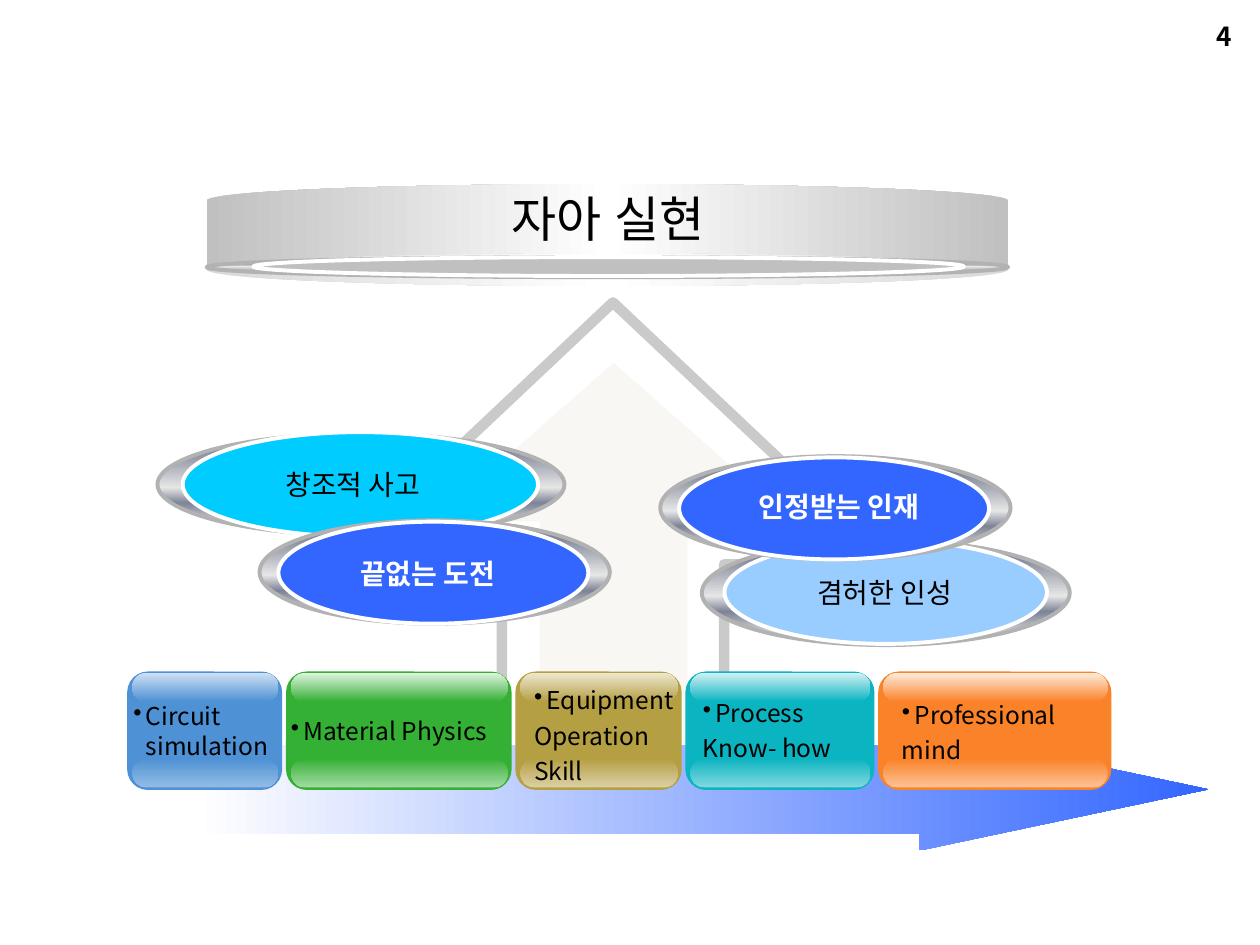
from lxml import etree
from pptx import Presentation
from pptx.dml.color import RGBColor
from pptx.enum.shapes import MSO_SHAPE
from pptx.enum.text import MSO_ANCHOR, MSO_AUTO_SIZE, PP_ALIGN
from pptx.oxml.ns import qn
from pptx.util import Inches, Pt

OVAL, CAN = MSO_SHAPE.OVAL, MSO_SHAPE.CAN
ROUND = MSO_SHAPE.ROUNDED_RECTANGLE
UP, RIGHT_ARROW = MSO_SHAPE.UP_ARROW, MSO_SHAPE.RIGHT_ARROW
TOP, MIDDLE = MSO_ANCHOR.TOP, MSO_ANCHOR.MIDDLE
LEFT, CENTER, RIGHT = PP_ALIGN.LEFT, PP_ALIGN.CENTER, PP_ALIGN.RIGHT

KOREAN = "Noto Sans CJK KR"
CHROME = [(0, "E6E6E6"), (15, "7D8496"), (53, "E6E6E6"),
          (68, "7D8496"), (93, "E6E6E6"), (100, "FFFFFF")]
SILVER = [(0, "C0C0C0"), (50, "FFFFFF"), (100, "C0C0C0")]

CARD_LEFT, CARD_TOP, CARD_HEIGHT, CARD_GAP = 1.01, 5.33, 0.94, 0.03
# width, colour, top gloss, bottom gloss, lines, text dx, dy, width, anchor
CARDS = [
    (1.23, "4E91D4", "CEE1F3", "93BCE5", ["Circuit simulation"],
     -0.05, 0.13, 1.5, MIDDLE),
    (1.79, "34B034", "E0F3E0", "A3DBA3", ["Material Physics"],
     -0.06, 0.13, 2.07, MIDDLE),
    (1.32, "B59F43", "EDE8D1", "DBD0A4", ["Equipment", "Operation", "Skill"],
     0.05, 0.06, 1.48, TOP),
    (1.5, "0BB4C1", "D3F1F4", "82D8DF", ["Process", "Know- how"],
     0.04, 0.16, 2.07, TOP),
    (1.85, "FA8228", "FEECDE", "FDC296", ["Professional", "mind"],
     0.09, 0.14, 1.76, MIDDLE),
]
# outer ring, inner disc, disc colour, text, text box, text colour, bold
BADGES = [
    ((5.57, 4.29, 2.92, 0.83), (5.75, 4.29, 2.56, 0.82), "99CCFF",
     "겸허한 인성", (6.12, 4.52, 1.8, 0.37), "000000", False),
    ((1.25, 3.44, 3.23, 0.81), (1.45, 3.43, 2.82, 0.83), "00CCFF",
     "창조적 사고", (1.9, 3.66, 1.8, 0.37), "000000", False),
    ((2.06, 4.13, 2.78, 0.82), (2.21, 4.14, 2.46, 0.81), "3366FF",
     "끝없는 도전", (2.53, 4.37, 1.73, 0.37), "FFFFFF", True),
    ((5.24, 3.62, 2.78, 0.82), (5.39, 3.63, 2.46, 0.81), "3366FF",
     "인정받는 인재", (5.4, 3.84, 2.52, 0.37), "FFFFFF", True),
]


def rgb(color):
    return RGBColor.from_string(color)


def set_alpha(sp, parent, percent):
    """Make the solid colour under the given spPr path translucent."""
    for clr in sp._element.spPr.xpath(f"{parent}/a:solidFill/a:srgbClr"):
        etree.SubElement(clr, qn("a:alpha"), val=str(percent * 1000))


def set_gradient(sp, stops, angle):
    sp.fill.gradient()
    sp.fill.gradient_angle = -angle % 360
    gs_list = sp._element.spPr.xpath("./a:gradFill/a:gsLst")[0]
    for old in list(gs_list):
        gs_list.remove(old)
    for pos, color in stops:
        gs = etree.SubElement(gs_list, qn("a:gs"), pos=str(pos * 1000))
        etree.SubElement(gs, qn("a:srgbClr"), val=color)


def add_shape(s, kind, box, fill=None, line=None, width=2.25, adj=(),
              angle=0, rotation=0):
    """Fill is a hex colour, a list of gradient stops, or None."""
    sp = s.shapes.add_shape(kind, *map(Inches, box))
    sp.shadow.inherit = False
    sp.rotation = rotation
    for i, value in enumerate(adj):
        sp.adjustments[i] = value
    if fill is None:
        sp.fill.background()
    elif isinstance(fill, str):
        sp.fill.solid()
        sp.fill.fore_color.rgb = rgb(fill)
    else:
        set_gradient(sp, fill, angle)
    if line:
        sp.line.color.rgb = rgb(line)
        sp.line.width = Pt(width)
    else:
        sp.line.fill.background()
    return sp


def add_run(p, text, size, color="000000", bold=False, font=KOREAN):
    r = p.add_run()
    r.text = text
    r.font.size, r.font.bold, r.font.name = Pt(size), bold, font
    r.font.color.rgb = rgb(color)
    etree.SubElement(r._r.get_or_add_rPr(), qn("a:ea"), typeface=font)


def add_text(s, box, lines, size, align=LEFT, anchor=TOP, bulleted=False,
             **style):
    tf = s.shapes.add_textbox(*map(Inches, box)).text_frame
    tf.word_wrap = True
    tf.vertical_anchor = anchor
    for i, line in enumerate(lines):
        p = tf.add_paragraph() if i else tf.paragraphs[0]
        p.alignment = align
        if bulleted:
            p.space_before = Pt(size / 4)
            pPr = p._p.get_or_add_pPr()
            pPr.set("marL", str(Inches(0.1)))
            pPr.set("indent", str(-Inches(0.1)))
            if i == 0:
                etree.SubElement(pPr, qn("a:buChar"), char="•")
        add_run(p, line, size, **style)


def add_up_arrows(s):
    outline = add_shape(s, UP, (2.66, 2.4, 4.41, 3.85), line="969696",
                        width=6, adj=(0.4, 0.54))
    set_alpha(outline, "./a:ln", 50)
    core = add_shape(s, UP, (3.44, 2.88, 2.86, 3.03), "EEECE1",
                     adj=(0.41, 0.44))
    set_alpha(core, ".", 39)


def add_badge(s, ring, disc, fill, text, text_box, color, bold):
    add_shape(s, OVAL, ring, CHROME, "B2B2B2", angle=90)
    add_shape(s, OVAL, disc, fill, "FFFFFF")
    add_text(s, text_box, [text], 16, CENTER, color=color, bold=bold)


def add_card(s, left, width, color, light_top, light_bottom, lines,
             dx, dy, text_width, anchor):
    add_shape(s, ROUND, (left, CARD_TOP, width, CARD_HEIGHT), color,
              adj=(0.175,))
    for offset, stops in ((0.69, [(0, color), (100, light_bottom)]),
                          (0.01, [(0, light_top), (100, color)])):
        add_shape(s, ROUND, (left + 0.04, CARD_TOP + offset, width - 0.07, 0.23),
                  stops, adj=(0.5,), angle=90)
    add_text(s, (left + dx, CARD_TOP + dy, text_width, 0.68), lines, 14,
             anchor=anchor, bulleted=True)


def add_drum(s):
    add_shape(s, CAN, (1.64, 1.46, 6.36, 0.81), SILVER, adj=(0.32,),
              rotation=180)
    add_shape(s, OVAL, (1.64, 2.04, 6.36, 0.16), CHROME, "B2B2B2",
              angle=90, rotation=180)
    add_shape(s, OVAL, (2.01, 2.04, 5.64, 0.15), "C0C0C0", "FFFFFF",
              rotation=180)


def place_title(s, text):
    """Format the title and bring it in front of the drum."""
    title = s.shapes.title
    title.left, title.top, title.width, title.height = map(
        Inches, (1.63, 1.41, 6.39, 0.64))
    tf = title.text_frame
    tf.auto_size = MSO_AUTO_SIZE.NONE
    tf.vertical_anchor = MIDDLE
    tf.margin_left = tf.margin_right = tf.margin_top = tf.margin_bottom = 0
    tf.paragraphs[0].alignment = CENTER
    add_run(tf.paragraphs[0], text, 28, font="Arial")
    title._element.getparent().append(title._element)


def main():
    prs = Presentation()
    prs.slide_width, prs.slide_height = Inches(10), Inches(7.5)
    s = prs.slides.add_slide(prs.slide_layouts[5])
    add_text(s, (7.55, 0.11, 2.33, 0.25), ["4"], 15, RIGHT, bold=True)
    add_up_arrows(s)
    for badge in BADGES:
        add_badge(s, *badge)
    add_shape(s, RIGHT_ARROW, (1.56, 5.78, 8.03, 0.97),
              [(0, "FFFFFF"), (100, "3366FF")], adj=(0.72, 2.36))
    left = CARD_LEFT
    for card in CARDS:
        add_card(s, left, *card)
        left += card[0] + CARD_GAP
    add_drum(s)
    place_title(s, "자아 실현")
    prs.save("out.pptx")


if __name__ == "__main__":
    main()
